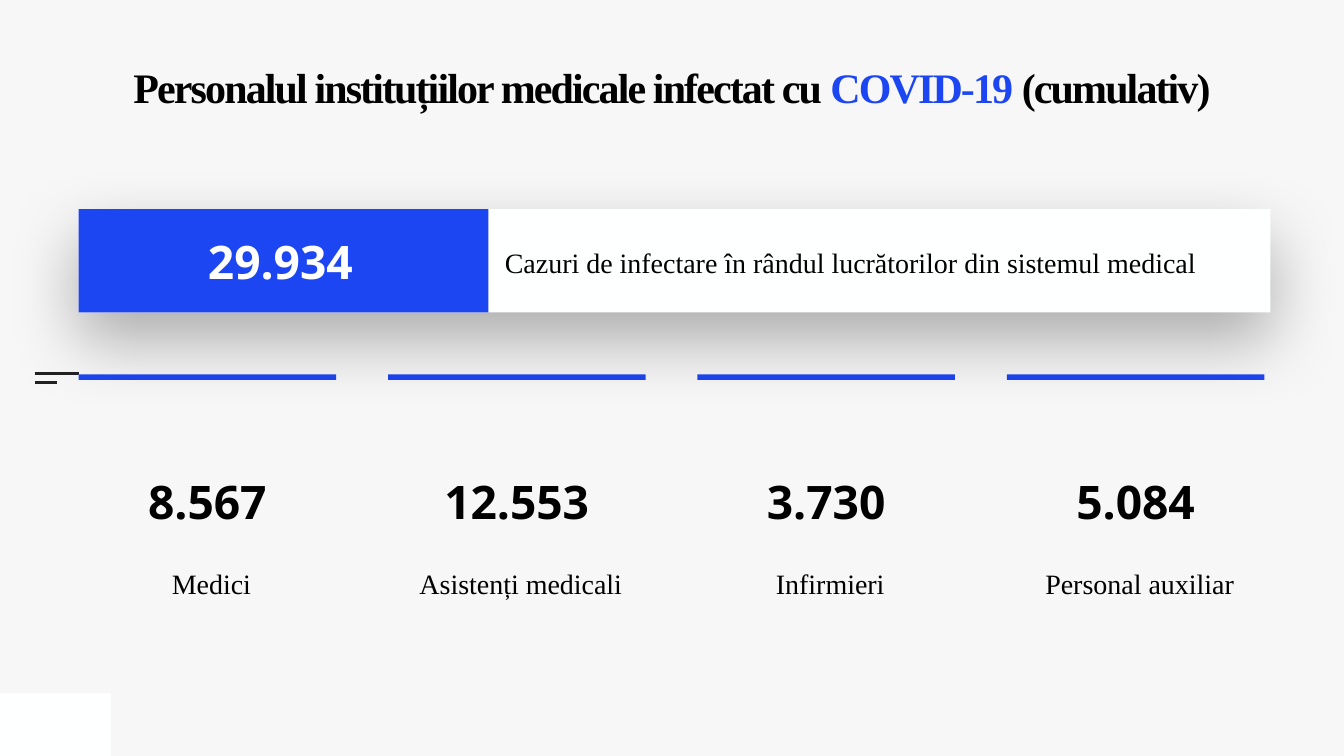
from dataclasses import dataclass

from lxml import etree
from pptx import Presentation
from pptx.dml.color import RGBColor
from pptx.enum import shapes, text
from pptx.oxml import ns
from pptx.util import Inches, Pt

BLACK = RGBColor(0x00, 0x00, 0x00)
WHITE = RGBColor(0xFF, 0xFF, 0xFF)
PAPER = RGBColor(0xFE, 0xFF, 0xFF)
GREY = RGBColor(0xF7, 0xF7, 0xF7)
DARK = RGBColor(0x22, 0x22, 0x22)
BLUE = RGBColor(0x1D, 0x46, 0xF3)
SERIF = "Times New Roman"
SANS = "Open Sans"
LEFT, STEP, WIDE = 1.56, 6.14, 5.11
TOP = 7.43


@dataclass
class Card:
    count: str
    label: str


@dataclass
class Box:
    x: float
    y: float
    w: float
    h: float

    def lengths(self) -> list:
        return [Inches(n) for n in (self.x, self.y, self.w, self.h)]


CARDS = [
    Card("8.567", "Medici"),
    Card("12.553", "Asistenți medicali"),
    Card("3.730", "Infirmieri"),
    Card("5.084", "Personal auxiliar"),
]


def write(shape, *runs, size=40, font=SERIF, bold=False, color=BLACK,
          align=text.PP_ALIGN.CENTER, anchor=text.MSO_ANCHOR.MIDDLE,
          inset=(0.1, 0.1, 0.1, 0.1), line=None, before=None, track=None):
    frame = shape.text_frame
    frame.word_wrap = True
    frame.auto_size = text.MSO_AUTO_SIZE.NONE
    frame.vertical_anchor = anchor
    frame.margin_left, frame.margin_top, frame.margin_right, frame.margin_bottom = map(Inches, inset)
    para = frame.paragraphs[0]
    para.alignment = align
    para.line_spacing = line
    para.space_before = before
    for words, tint in runs:
        run = para.add_run()
        run.text = words
        run.font.size = Pt(size)
        run.font.name = font
        run.font.bold = bold
        run.font.color.rgb = tint or color
        if track:
            run._r.get_or_add_rPr().set("spc", str(int(track * 100)))


def block(slide, box: Box, color: RGBColor):
    shape = slide.shapes.add_shape(shapes.MSO_SHAPE.RECTANGLE, *box.lengths())
    shape.shadow.inherit = False
    shape.fill.solid()
    shape.fill.fore_color.rgb = color
    shape.line.fill.background()
    return shape


def label(slide, box: Box, words: str, **style):
    write(slide.shapes.add_textbox(*box.lengths()), (words, None), **style)


def rule(slide, x: float, y: float, w: float):
    line = slide.shapes.add_connector(
        shapes.MSO_CONNECTOR.STRAIGHT, Inches(x), Inches(y), Inches(x + w), Inches(y))
    line.line.color.rgb = DARK
    line.line.width = Pt(3)
    etree.SubElement(line._element.spPr, ns.qn("a:effectLst"))


def shade(shape, blur: float, dist: float, alpha: int):
    effects = shape._element.spPr.find(ns.qn("a:effectLst"))
    outer = etree.SubElement(
        effects, ns.qn("a:outerShdw"), blurRad=str(Pt(blur)), dist=str(Pt(dist)),
        dir="5400000", algn="ctr", rotWithShape="0")
    tint = etree.SubElement(outer, ns.qn("a:srgbClr"), val=str(BLACK))
    etree.SubElement(tint, ns.qn("a:alpha"), val=str(alpha * 1000))


def column(slide, x: float, card: Card):
    panel = block(slide, Box(x, TOP, WIDE, 5.35), GREY)
    write(panel, (card.label, None), anchor=text.MSO_ANCHOR.BOTTOM,
          inset=(0.55, 0.71, 0.39, 0.87), line=1.3, before=Pt(20))
    block(slide, Box(x, TOP, WIDE, 0.11), BLUE)
    label(slide, Box(x, 9.28, WIDE, 1.31), card.count, size=66, font=SANS, bold=True)


def banner(slide):
    bar = block(slide, Box(LEFT, 4.15, 23.65, 2.05), PAPER)
    shade(bar, blur=100, dist=40, alpha=30)
    label(slide, Box(9.92, 4.77, 15.34, 0.88),
          "Cazuri de infectare în rândul lucrătorilor din sistemul medical",
          align=text.PP_ALIGN.LEFT)
    block(slide, Box(LEFT, 4.15, 8.13, 2.05), BLUE)
    label(slide, Box(LEFT, 4.52, 8.01, 1.31), "29.934",
          size=66, font=SANS, bold=True, color=WHITE)


def heading(slide):
    title = slide.shapes.title
    title.left, title.top, title.width, title.height = Box(0, 1.42, 26.67, 0.81).lengths()
    write(title, ("Personalul instituțiilor medicale infectat cu ", None),
          ("COVID-19 ", BLUE), ("(cumulativ)", None), size=60, bold=True,
          anchor=text.MSO_ANCHOR.TOP, inset=(0, 0, 0, 0), line=0.8, track=-2.7)


def main():
    deck = Presentation()
    deck.slide_width, deck.slide_height = Inches(26.67), Inches(15)
    slide = deck.slides.add_slide(deck.slide_layouts[5])
    slide.background.fill.solid()
    slide.background.fill.fore_color.rgb = GREY
    block(slide, Box(0, 13.76, 2.2, 1.24), PAPER)
    rule(slide, 0.69, 7.41, 0.88)
    rule(slide, 0.69, 7.59, 0.44)
    for i, card in enumerate(CARDS):
        column(slide, LEFT + i * STEP, card)
    heading(slide)
    banner(slide)
    deck.save("out.pptx")


if __name__ == "__main__":
    main()
